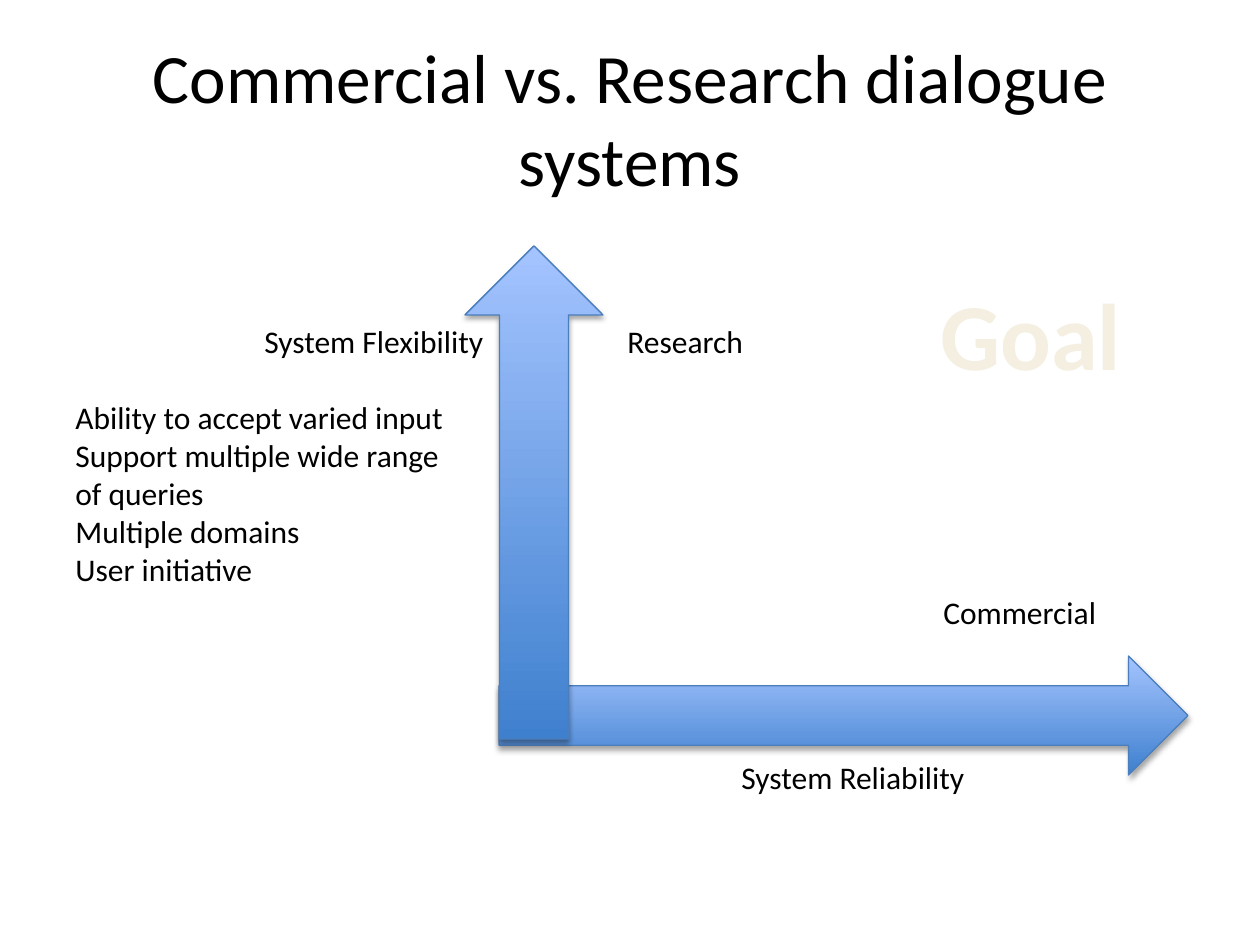
"""Build the slide on commercial and research dialogue systems."""
import pptx
import pptx.dml.color
import pptx.enum.shapes
import pptx.enum.text
import pptx.util
from lxml import etree

SCALE = 914400 / 126
NS = "http://schemas.openxmlformats.org/drawingml/2006/main"
KIND = pptx.enum.shapes.MSO_SHAPE


def px(*nums):
    return [pptx.util.Emu(round(n * SCALE)) for n in nums]


def tint(code):
    return pptx.dml.color.RGBColor.from_string(code)


class Deck:
    face = "Calibri"
    ink = "000000"
    edge = "4B7EBC"
    stops = ("3F80CE", "A4C4FF")

    def __init__(self, wide, high):
        self.prs = pptx.Presentation()
        self.prs.slide_width, self.prs.slide_height = px(wide, high)
        self.slide = self.prs.slides.add_slide(self.prs.slide_layouts[5])

    def words(self, para, text, size=18, color=None, bold=False):
        run = para.add_run()
        run.text = text
        font = run.font
        font.name = self.face
        font.size = pptx.util.Pt(size)
        font.bold = bold
        font.color.rgb = tint(color or self.ink)

    def title(self, text, box):
        shape = self.slide.shapes.title
        shape.left, shape.top, shape.width, shape.height = px(*box)
        frame = shape.text_frame
        frame.vertical_anchor = pptx.enum.text.MSO_ANCHOR.MIDDLE
        para = frame.paragraphs[0]
        para.alignment = pptx.enum.text.PP_ALIGN.CENTER
        self.words(para, text, 39.6)

    def arrow(self, kind, box):
        shape = self.slide.shapes.add_shape(kind, *px(*box))
        shape.fill.gradient()
        shape.fill.gradient_angle = 90
        for stop, code, spot in zip(shape.fill.gradient_stops, self.stops, (0, 1)):
            stop.color.rgb = tint(code)
            stop.position = spot
        shape.line.color.rgb = tint(self.edge)
        shape.line.width = pptx.util.Pt(0.75)
        self.shade(shape)

    def shade(self, shape):
        shape.shadow.inherit = False
        glow = shape.element.spPr.find(f"{{{NS}}}effectLst")
        glow.append(etree.fromstring(
            f'<a:outerShdw xmlns:a="{NS}" blurRad="39370" dist="22860" dir="5400000" '
            'rotWithShape="0"><a:srgbClr val="000000"><a:alpha val="35000"/>'
            '</a:srgbClr></a:outerShdw>'))

    def label(self, lines, box, wrap=True, **style):
        frame = self.slide.shapes.add_textbox(*px(*box)).text_frame
        frame.word_wrap = wrap
        for num, line in enumerate(lines):
            para = frame.add_paragraph() if num else frame.paragraphs[0]
            self.words(para, line, **style)
        return frame.paragraphs

    def save(self):
        self.prs.save("out.pptx")


def main():
    deck = Deck(1260, 945)
    deck.title("Commercial vs. Research dialogue systems", (63, 38, 1134, 158))
    deck.arrow(KIND.RIGHT_ARROW, (499, 656, 689, 119))
    deck.label(["System Reliability"], (729, 752, 261, 50), wrap=False)
    deck.arrow(KIND.UP_ARROW, (465, 246, 138, 493))
    paras = deck.label(
        ["System Flexibility", "Ability to accept varied input",
         "Support multiple wide range", "of queries", "Multiple domains",
         "User initiative"], (63, 316, 440, 318), wrap=False)
    paras[0].level = 3
    paras[0]._p.get_or_add_pPr().set("marL", str(px(189)[0]))
    paras[1].space_before = pptx.util.Pt(22)
    deck.label(["Commercial"], (931, 587, 229, 50))
    deck.label(["Research"], (615, 316, 229, 50))
    deck.label(["Goal"], (928, 270, 214, 128), size=54, color="F4EFE0", bold=True)
    deck.save()


if __name__ == "__main__":
    main()
